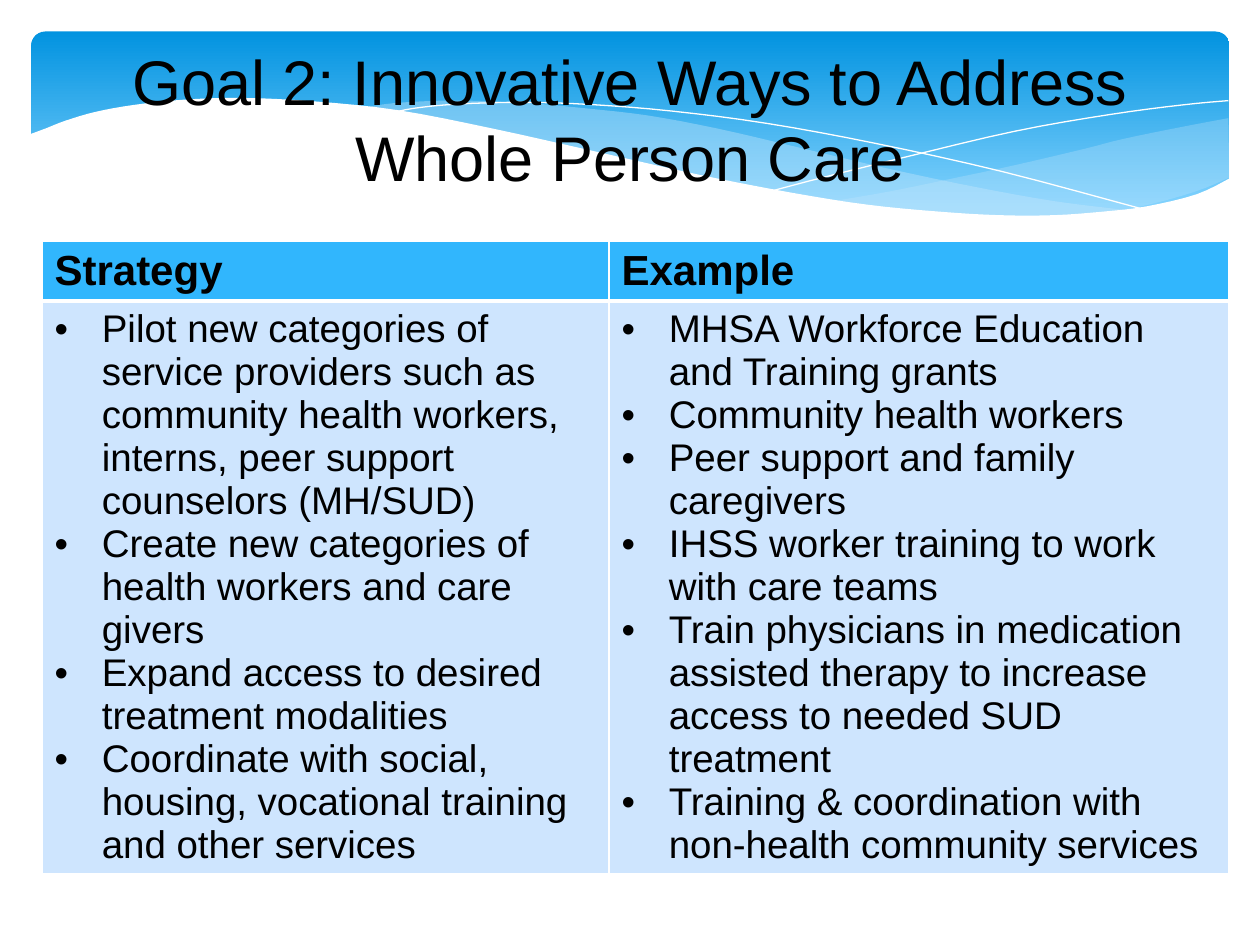
from lxml import etree
from pptx import Presentation
from pptx.dml import color
from pptx.enum import shapes, text
from pptx.oxml import ns
from pptx.util import Pt

COLORS = {
    "banner_top": "0293E0", "banner_bottom": "83D3FE", "wave": "C6E7FC",
    "header": "31B6FD", "body": "CEE5FE", "white": "FFFFFF", "text": "000000",
}
FONT = "Arial"

# Edges of the banner waves, in points
RIGHT_TOP = [(702, 67.5), (673, 73), (641.5, 79.5), (620, 85), (579.5, 94.5),
             (542, 102.5), (508, 109.5), (476, 115)]
RIGHT_BOTTOM = [(476, 115), (507.5, 119), (545, 122), (586, 124), (622, 122.5),
                (652, 118), (683, 109.5), (702.5, 101.5)]
LEFT_TOP = [(643, 120), (602.5, 115), (558, 107), (508, 96.5), (453, 83.5),
            (410, 73.5), (370, 66), (335, 62), (302, 59), (260, 57.5),
            (225, 59), (206, 62)]
LEFT_BOTTOM = [(206, 62), (246, 67.5), (291, 76), (323, 83.5), (381.5, 97),
               (433, 108), (479, 116), (521, 121), (556, 123.5), (589, 124.5),
               (618, 123.5), (643, 120)]
FALLING_LINE = [(222.5, 65), (236, 62), (261.5, 59.5), (299.5, 58.5), (338, 59.8),
                (384, 63.5), (438, 70.5), (500.5, 82), (572.5, 98), (653, 119.5)]
RISING_LINE = [(441.5, 109), (470, 101.5), (518.5, 89.5), (580, 75), (634, 65.5),
               (675.5, 60), (702, 57.5)]
WHITE_EDGE = [(16.5, 77), (26, 73.5), (37.5, 69), (54.5, 64), (76.5, 60), (105, 57),
              (139, 56), (180, 58), (227.5, 63), (281.5, 73.5), (342, 87), (400, 100),
              (451.5, 110), (495.5, 117), (537, 121), (571, 123), (602.5, 123),
              (630, 121), (655, 118), (684, 111), (703.5, 101.5)]

TITLE = "Goal 2: Innovative Ways to Address Whole Person Care"
COLUMNS = {
    "Strategy": [
        "Pilot new categories of service providers such as community health workers, "
        "interns, peer support counselors (MH/SUD)",
        "Create new categories of health workers and care givers",
        "Expand access to desired treatment modalities",
        "Coordinate with social, housing, vocational training and other services",
    ],
    "Example": [
        "MHSA Workforce Education and Training grants",
        "Community health workers",
        "Peer support and family caregivers",
        "IHSS worker training to work with care teams",
        "Train physicians in medication assisted therapy to increase access to needed "
        "SUD treatment",
        "Training & coordination with non-health community services",
    ],
}


def rgb(name):
    return color.RGBColor.from_string(COLORS[name])


def smooth(points, steps=4):
    """Return a Catmull-Rom curve through the points."""
    padded = [points[0], *points, points[-1]]
    curve = []
    for a, b, c, d in zip(padded, padded[1:], padded[2:], padded[3:]):
        for t in (i / steps for i in range(steps)):
            curve.append(tuple(
                q + t * (r - p) / 2 + t**2 * (2 * p - 5 * q + 4 * r - s) / 2
                + t**3 * (3 * q - p - 3 * r + s) / 2
                for p, q, r, s in zip(a, b, c, d)))
    return curve + [points[-1]]


def add_outline(slide, points, closed):
    (x, y), *rest = [(Pt(px), Pt(py)) for px, py in points]
    builder = slide.shapes.build_freeform(x, y)
    builder.add_line_segments(rest, close=closed)
    outline = builder.convert_to_shape()
    outline.shadow.inherit = False
    return outline


def add_wave(slide, points, fill, opacity=100):
    wave = add_outline(slide, points, closed=True)
    wave.fill.solid()
    wave.fill.fore_color.rgb = rgb(fill)
    wave.line.fill.background()
    if opacity < 100:
        tint = wave.element.spPr.find(".//" + ns.qn("a:srgbClr"))
        etree.SubElement(tint, ns.qn("a:alpha"), val=str(opacity * 1000))


def add_hairline(slide, points):
    hairline = add_outline(slide, smooth(points), closed=False)
    hairline.fill.background()
    hairline.line.color.rgb = rgb("white")
    hairline.line.width = Pt(0)


def add_banner(slide):
    banner = slide.shapes.add_shape(shapes.MSO_SHAPE.ROUNDED_RECTANGLE,
                                    Pt(18), Pt(18), Pt(684.5), Pt(112.5))
    banner.adjustments[0] = 0.07
    banner.shadow.inherit = False
    banner.line.fill.background()
    banner.fill.gradient()
    banner.fill.gradient_angle = 270
    stops = zip(banner.fill.gradient_stops, (0, 0.9), ("banner_top", "banner_bottom"))
    for stop, position, name in stops:
        stop.position = position
        stop.color.rgb = rgb(name)

    add_wave(slide, smooth(RIGHT_TOP) + smooth(RIGHT_BOTTOM), "wave", 29)
    add_wave(slide, smooth(LEFT_TOP) + smooth(LEFT_BOTTOM), "wave", 40)
    add_hairline(slide, FALLING_LINE)
    add_hairline(slide, RISING_LINE)
    add_wave(slide, smooth(WHITE_EDGE) + [(703.5, 161), (16.5, 161)], "white")


def style_runs(paragraph, size, bold=False):
    for run in paragraph.runs:
        run.font.name = FONT
        run.font.size = Pt(size)
        run.font.bold = bold
        run.font.color.rgb = rgb("text")


def set_title(slide):
    title = slide.shapes.title
    slide.shapes.element.append(title.element)  # bring in front of the banner
    title.left, title.top, title.width, title.height = Pt(24), Pt(18), Pt(672), Pt(99)
    frame = title.text_frame
    frame.text = TITLE
    frame.word_wrap = True
    frame.vertical_anchor = text.MSO_ANCHOR.MIDDLE
    frame.paragraphs[0].alignment = text.PP_ALIGN.CENTER
    style_runs(frame.paragraphs[0], 36)


def set_borders(cell, **widths):
    """Draw white borders; widths are in points, keyed L, R, T and B."""
    properties = cell._tc.get_or_add_tcPr()
    for index, side in enumerate("LRTB"):
        border = etree.Element(ns.qn("a:ln" + side), w=str(Pt(widths.get(side, 1))))
        fill = etree.SubElement(border, ns.qn("a:solidFill"))
        etree.SubElement(fill, ns.qn("a:srgbClr"), val=COLORS["white"])
        properties.insert(index, border)


def set_bullet(paragraph, indent=27):
    properties = paragraph._p.get_or_add_pPr()
    properties.set("marL", str(Pt(indent)))
    properties.set("indent", str(Pt(-indent)))
    etree.SubElement(properties, ns.qn("a:buFont"), typeface=FONT)
    etree.SubElement(properties, ns.qn("a:buChar"), char="•")


def fill_cell(cell, lines, fill, size, header):
    cell.fill.solid()
    cell.fill.fore_color.rgb = rgb(fill)
    cell.text_frame.text = "\n".join(lines)
    for paragraph in cell.text_frame.paragraphs:
        style_runs(paragraph, size, bold=header)
        if not header:
            set_bullet(paragraph)
    set_borders(cell, **({"B": 3} if header else {"T": 3}))


def add_strategy_table(slide):
    table = slide.shapes.add_table(2, 2, Pt(24), Pt(138), Pt(678), Pt(360)).table
    for column, width in zip(table.columns, (324, 354)):
        column.width = Pt(width)
    for row, height in zip(table.rows, (33, 327)):
        row.height = Pt(height)
    for index, (heading, items) in enumerate(COLUMNS.items()):
        fill_cell(table.cell(0, index), [heading], "header", 24, header=True)
        fill_cell(table.cell(1, index), items, "body", 22, header=False)


def main():
    deck = Presentation()
    deck.slide_width, deck.slide_height = Pt(720), Pt(540)
    slide = deck.slides.add_slide(deck.slide_layouts[5])
    add_banner(slide)
    set_title(slide)
    add_strategy_table(slide)
    deck.save("out.pptx")


if __name__ == "__main__":
    main()
